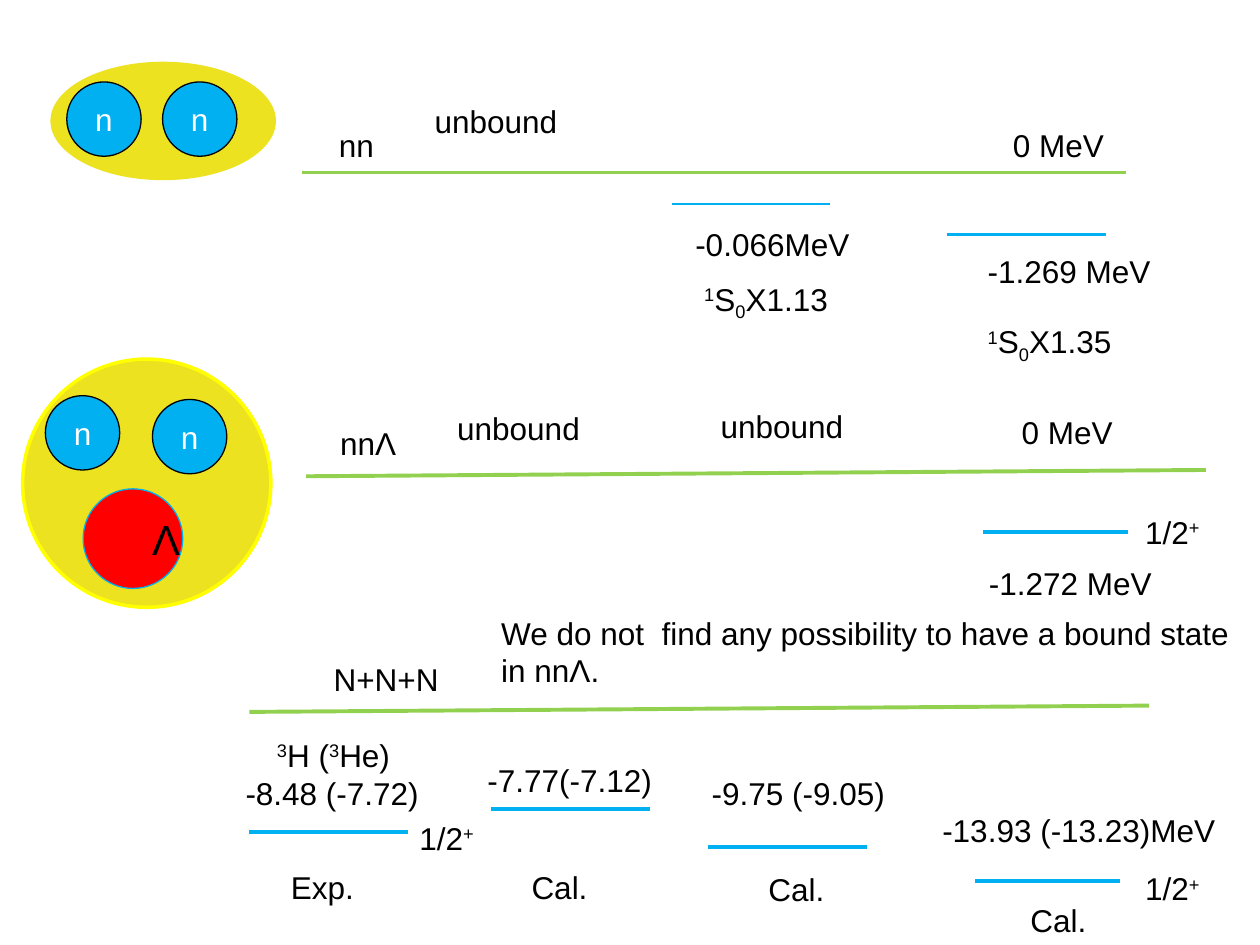
"""Draw the energy levels of the nn, nnΛ and three-nucleon systems on one slide."""
import pptx
import pptx.util
from pptx.dml.color import RGBColor
from pptx.enum.shapes import MSO_CONNECTOR, MSO_SHAPE
from pptx.enum.text import MSO_ANCHOR, MSO_AUTO_SIZE, PP_ALIGN
from pptx.oxml.ns import qn
from lxml import etree

WIDTH, HEIGHT = pptx.util.Inches(10), pptx.util.Inches(7.5)
COLUMNS, ROWS = 100, 75
BLACK = RGBColor(0x00, 0x00, 0x00)
WHITE = RGBColor(0xFF, 0xFF, 0xFF)
OLIVE = RGBColor(0xEC, 0xE2, 0x20)
YELLOW = RGBColor(0xFF, 0xFF, 0x00)
BLUE = RGBColor(0x00, 0xB0, 0xF0)
GREEN = RGBColor(0x92, 0xD0, 0x50)
RED = RGBColor(0xFF, 0x00, 0x00)
BASELINES = {"^": "30000", "_": "-25000"}

THRESHOLDS = [
    (24, 13.7, 89.4, 13.7, 1.5),
    (24.3, 37.8, 95.7, 37.3, 2.25),
    (19.8, 56.5, 91.2, 56, 2.25),
]
LEVELS = [
    (53.3, 16.2, 12.6, 1.5),
    (75.2, 18.6, 12.6, 1.5),
    (78, 42.2, 11.5, 2.25),
    (19.8, 66, 12.6, 2.25),
    (39, 64.2, 12.6, 2.25),
    (56.2, 67.2, 12.6, 2.25),
    (77.4, 69.9, 11.5, 2.25),
]
LABELS = [
    ("nn", 25.9, 9.5, 4.8),
    ("unbound", 33.5, 7.6, 11.8),
    ("0 MeV", 79.4, 9.5, 9.3),
    ("-0.066MeV", 54.2, 17.4, 14.4),
    ("^1S_0X1.13", 54.9, 21.7, 12.2),
    ("-1.269 MeV", 77.4, 19.5, 15.1),
    ("^1S_0X1.35", 77.4, 25.1, 12.2),
    ("nnΛ", 26, 33.2, 6.5),
    ("unbound", 35.3, 32, 11.8),
    ("unbound", 56.2, 31.8, 11.8),
    ("0 MeV", 80.1, 32.3, 9.3),
    ("1/2^+", 89.9, 40.2, 6.5),
    ("-1.272 MeV", 77.5, 44.3, 15.1),
    ("We do not  find any possibility to have a bound state\nin nnΛ.", 38.8, 48.2, 60.3),
    ("N+N+N", 25.5, 51.9, 10.4),
    ("^3H (^3He)", 21, 57.9, 11.3),
    ("-8.48 (-7.72)", 18.5, 60.9, 15.9),
    ("1/2^+", 32.3, 64.5, 6.5),
    ("Exp.", 22.1, 68.4, 7.1),
    ("-7.77(-7.12)", 37.7, 59.9, 15.2),
    ("Cal.", 41.2, 68.4, 6.5),
    ("-9.75 (-9.05)", 55.5, 60.9, 15.9),
    ("Cal.", 60, 68.6, 6.5),
    ("-13.93 (-13.23)MeV", 73.8, 63.9, 23.9),
    ("1/2^+", 89.9, 68.5, 6.5),
    ("Cal.", 80.8, 71, 6.5),
]
NEUTRONS = [(5.3, 6.5), (12.9, 6.5), (3.6, 31.4), (12.1, 31.7)]


def col(n):
    """Return the length of n grid columns."""
    return int(WIDTH * n / COLUMNS)


def row(n):
    """Return the length of n grid rows."""
    return int(HEIGHT * n / ROWS)


def split_scripts(text):
    """Split text into (piece, baseline) pairs; ^ and _ act on the next character."""
    pieces, plain, chars = [], "", iter(text)
    for char in chars:
        if char in BASELINES:
            pieces += [(plain, None), (next(chars), BASELINES[char])]
            plain = ""
        else:
            plain += char
    return [piece for piece in pieces + [(plain, None)] if piece[0]]


def write(tf, text, size=18, color=BLACK, align=PP_ALIGN.LEFT):
    """Fill a text frame with one paragraph for each line of text."""
    tf.word_wrap = False
    for i, line in enumerate(text.split("\n")):
        p = tf.add_paragraph() if i else tf.paragraphs[0]
        p.alignment = align
        for piece, baseline in split_scripts(line):
            r = p.add_run()
            r.text = piece
            r.font.name = "Arial"
            r.font.size = pptx.util.Pt(size)
            r.font.color.rgb = color
            if baseline:
                r.font._element.set("baseline", baseline)


def add_label(s, text, x, y, w):
    """Add a text box as tall as its lines."""
    h = 4 if "\n" not in text else 7.1
    tf = s.shapes.add_textbox(col(x), row(y), col(w), row(h)).text_frame
    tf.auto_size = MSO_AUTO_SIZE.SHAPE_TO_FIT_TEXT
    write(tf, text)


def add_line(s, x1, y1, x2, y2, color, width):
    """Add a straight line without a shadow."""
    line = s.shapes.add_connector(
        MSO_CONNECTOR.STRAIGHT, col(x1), row(y1), col(x2), row(y2))
    line.line.color.rgb = color
    line.line.width = pptx.util.Pt(width)
    etree.SubElement(line._element.spPr, qn("a:effectLst"))


def add_ellipse(s, x, y, w, h, fill, line=None, width=0.75, text="", **text_format):
    """Add a filled ellipse with an optional outline and text."""
    sp = s.shapes.add_shape(MSO_SHAPE.OVAL, col(x), row(y), col(w), row(h))
    sp.shadow.inherit = False
    sp.fill.solid()
    sp.fill.fore_color.rgb = fill
    if line is None:
        sp.line.fill.background()
    else:
        sp.line.color.rgb = line
        sp.line.width = pptx.util.Pt(width)
    if text:
        sp.text_frame.vertical_anchor = MSO_ANCHOR.MIDDLE
        write(sp.text_frame, text, **text_format)


def main():
    """Build and save the slide."""
    prs = pptx.Presentation()
    prs.slide_width, prs.slide_height = WIDTH, HEIGHT
    s = prs.slides.add_slide(prs.slide_layouts[6])
    add_ellipse(s, 4, 4.9, 17.9, 9.4, OLIVE)
    add_ellipse(s, 1.8, 28.5, 19.7, 19.7, OLIVE, line=YELLOW, width=2)
    add_ellipse(s, 6.6, 38.8, 7.9, 7.9, RED, line=BLUE, text="　Λ", size=24)
    for x, y in NEUTRONS:
        add_ellipse(s, x, y, 5.9, 5.9, BLUE, line=BLACK, text="n",
                    color=WHITE, align=PP_ALIGN.CENTER)
    for x1, y1, x2, y2, width in THRESHOLDS:
        add_line(s, x1, y1, x2, y2, GREEN, width)
    for x, y, length, width in LEVELS:
        add_line(s, x, y, x + length, y, BLUE, width)
    for label in LABELS:
        add_label(s, *label)
    prs.save("out.pptx")


if __name__ == "__main__":
    main()
